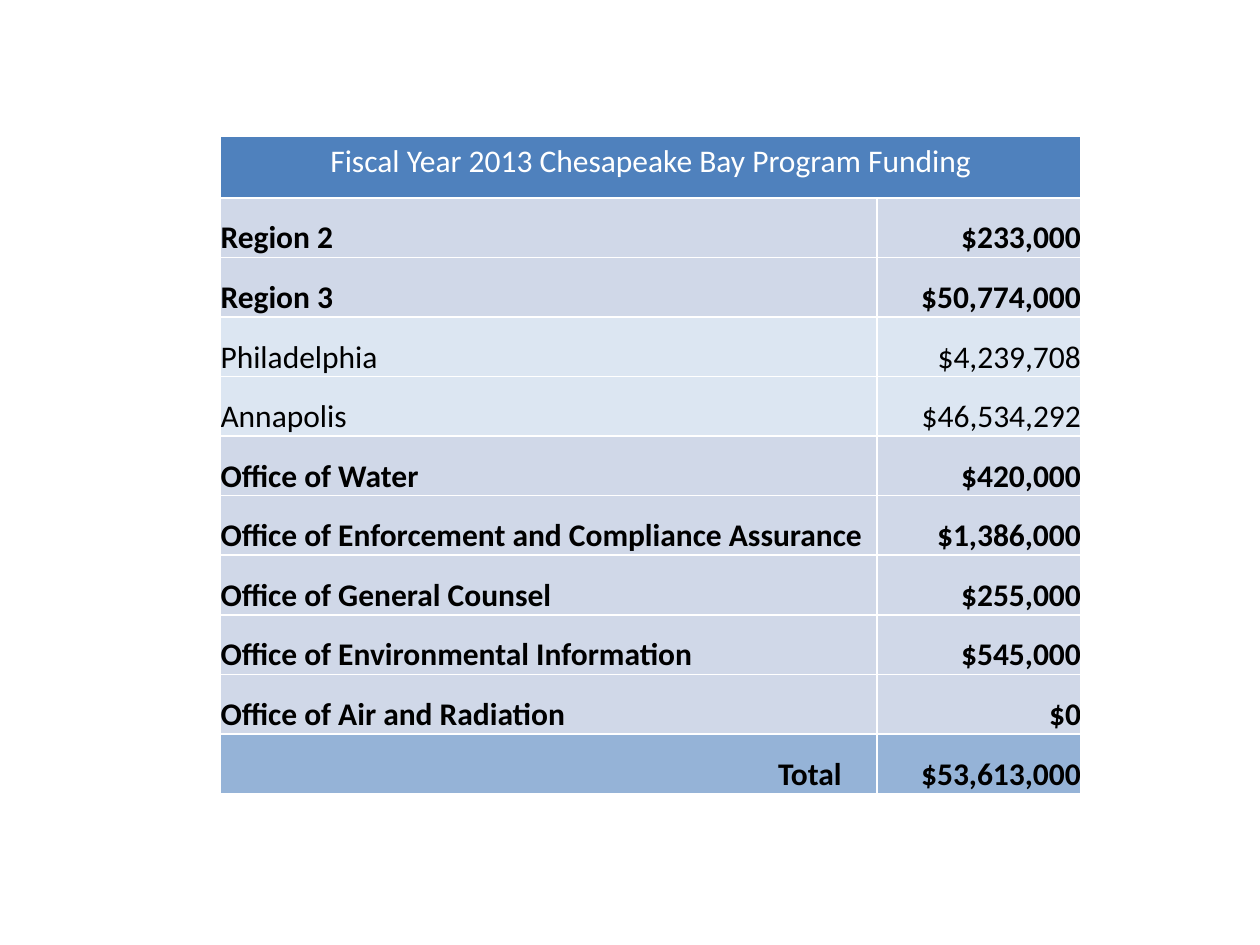
"""Build the Chesapeake Bay Program funding table slide."""
from dataclasses import dataclass

from pptx import Presentation
from pptx.dml.color import RGBColor
from pptx.enum.text import MSO_ANCHOR, PP_ALIGN
from pptx.util import Inches, Pt

LEFT, CENTER, RIGHT = PP_ALIGN.LEFT, PP_ALIGN.CENTER, PP_ALIGN.RIGHT
BOTTOM = MSO_ANCHOR.BOTTOM

TITLE = "Fiscal Year 2013 Chesapeake Bay Program Funding"
FUNDING = [
    ("office", "Region 2", "$233,000"),
    ("office", "Region 3", "$50,774,000"),
    ("site", "Philadelphia", "$4,239,708"),
    ("site", "Annapolis", "$46,534,292"),
    ("office", "Office of Water", "$420,000"),
    ("office", "Office of Enforcement and Compliance Assurance", "$1,386,000"),
    ("office", "Office of General Counsel", "$255,000"),
    ("office", "Office of Environmental Information", "$545,000"),
    ("office", "Office of Air and Radiation", "$0"),
    ("total", "Total", "$53,613,000"),
]


@dataclass(frozen=True)
class Theme:
    """Colours and type of the slide."""
    font: str = "Calibri"
    size: int = 18
    title_text: str = "FFFFFF"
    text: str = "000000"
    title: str = "4F81BD"
    office: str = "D0D8E8"
    site: str = "DCE6F2"
    total: str = "95B3D7"


THEME = Theme()
TABLE_LEFT, TABLE_TOP, TABLE_HEIGHT = 1.75, 1.08, 5.22
COLUMN_WIDTHS = (5.21, 1.62)
TITLE_HEIGHT = 0.49
TOTAL_INDENT = 0.28


def write_cell(cell, text, fill, color, align, bold):
    """Fill a cell and set its text."""
    cell.fill.solid()
    cell.fill.fore_color.rgb = RGBColor.from_string(fill)
    p = cell.text_frame.paragraphs[0]
    p.text = text
    p.alignment = align
    p.font.name = THEME.font
    p.font.size = Pt(THEME.size)
    p.font.bold = bold
    p.font.color.rgb = RGBColor.from_string(color)


def add_funding_table(slide):
    """Add the table of funding by office."""
    table = slide.shapes.add_table(
        len(FUNDING) + 1, len(COLUMN_WIDTHS), Inches(TABLE_LEFT), Inches(TABLE_TOP),
        Inches(sum(COLUMN_WIDTHS)), Inches(TABLE_HEIGHT)).table
    table.horz_banding = False
    for column, width in zip(table.columns, COLUMN_WIDTHS):
        column.width = Inches(width)
    row_height = (TABLE_HEIGHT - TITLE_HEIGHT) / len(FUNDING)
    for i, row in enumerate(table.rows):
        row.height = Inches(row_height if i else TITLE_HEIGHT)

    title = table.cell(0, 0)
    title.merge(table.cell(0, 1))
    write_cell(title, TITLE, THEME.title, THEME.title_text, CENTER, False)

    for i, (kind, name, amount) in enumerate(FUNDING, start=1):
        name_align = RIGHT if kind == "total" else LEFT
        for j, (text, align) in enumerate(((name, name_align), (amount, RIGHT))):
            cell = table.cell(i, j)
            write_cell(cell, text, getattr(THEME, kind), THEME.text, align, kind != "site")
            cell.vertical_anchor = BOTTOM
            cell.margin_left = cell.margin_top = cell.margin_right = cell.margin_bottom = 0
        if kind == "total":
            table.cell(i, 0).margin_right = Inches(TOTAL_INDENT)


def main():
    """Create and save the presentation."""
    prs = Presentation()
    prs.slide_width, prs.slide_height = Inches(10), Inches(7.5)
    add_funding_table(prs.slides.add_slide(prs.slide_layouts[6]))
    prs.save("out.pptx")


if __name__ == "__main__":
    main()
